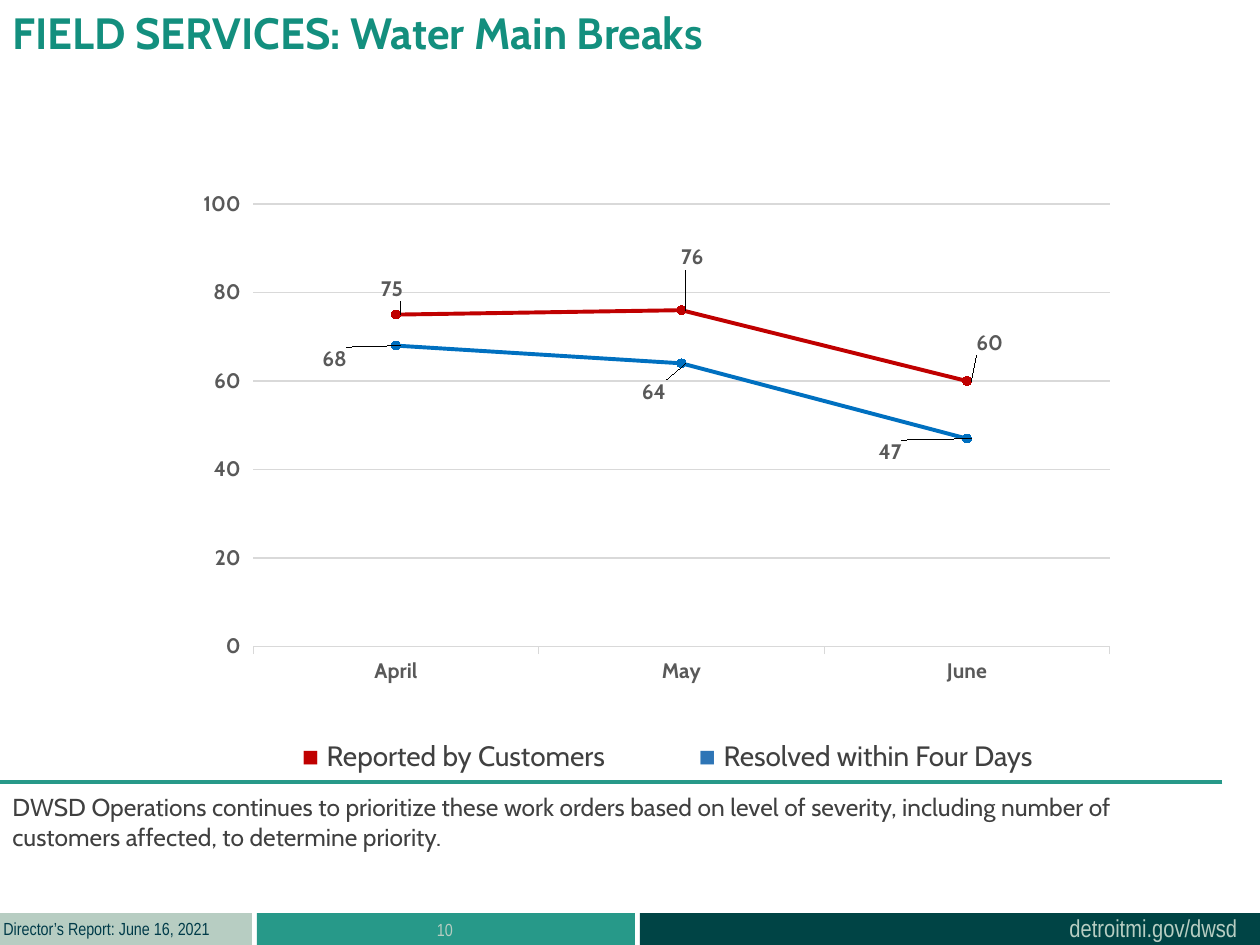
from lxml import etree
from pptx import Presentation
from pptx.chart.data import CategoryChartData
from pptx.dml.color import RGBColor
from pptx.enum.chart import XL_CHART_TYPE, XL_LABEL_POSITION, XL_MARKER_STYLE, XL_TICK_MARK
from pptx.enum.shapes import MSO_CONNECTOR, MSO_SHAPE
from pptx.enum.text import PP_ALIGN
from pptx.oxml.ns import qn
from pptx.util import Cm, Pt

TEAL, DARK, SAGE = "279989", "004445", "B7CDC2"
GREY, GRID, INK = "595959", "D9D9D9", "404040"
HEAD, FOOT = "Cabin", "Arial Narrow"

FOOTER_TOP, FOOTER_HEIGHT = 18.41, 0.64
FOOTER_BARS = [(5.18, 7.62, TEAL), (12.9, 12.5, DARK), (0, 5.08, SAGE)]  # left, width, colour

# place (left, top, width, height), wrap, alignment, runs (text, size, font, colour, bold)
TEXTS = [
    ((21.31, 18.29, 3.94, 0.86), False, PP_ALIGN.LEFT,
     [("detroitmi.gov/dwsd", 14, FOOT, SAGE, False)]),
    ((-0.18, 18.39, 4.67, 0.69), False, PP_ALIGN.LEFT,
     [("Director’s Report: June 16, 2021", 10, FOOT, "003B49", False)]),
    ((5.16, 18.41, 7.62, 1.02), True, PP_ALIGN.CENTER,
     [("10", 10, FOOT, SAGE, False)]),
    ((0, 0, 19.28, 1.96), True, PP_ALIGN.LEFT,
     [("FIELD SERVICES: Water Main Breaks", 25, HEAD, "138F7E", True)]),
    ((0, 15.85, 24.64, 1.45), True, PP_ALIGN.LEFT,
     [("DWSD Operations continues to prioritize these work orders based on level of severity, "
       "including number of customers affected, to determine priority.", 14, HEAD, INK, False)]),
]
LEGEND_PLACE, LEGEND_TAB = (5.84, 14.76, 15.77, 0.94), 8.0
LEGEND = [
    ("■ ", 16, "Arial", "C00000", False),
    ("Reported by Customers\t", 16, HEAD, INK, False),
    ("■ ", 16, "Arial", "2E75B6", False),
    ("Resolved within Four Days", 16, HEAD, INK, False),
]

CHART_PLACE = (2.84, 3.86, 19.69, 11.3)
PLOT = {"x": 0.115, "y": 0.021, "w": 0.877, "h": 0.791}
MONTHS = ["April", "May", "June"]
# name, colour, values, label shifts as shares of the chart size
SERIES = [
    ("Reported by Customers", "C00000", [75, 76, 60],
     [(-0.025, -0.046), (-0.01, -0.094), (0, -0.068)]),
    ("Resolved within Four Days", "0070C0", [68, 64, 47],
     [(-0.085, 0.025), (-0.05, 0.052), (-0.1, 0.025)]),
]


def rgb(value):
    return RGBColor.from_string(value)


def cm(place):
    return [Cm(v) for v in place]


def set_font(font, size, name, color, bold):
    font.size, font.name, font.bold = Pt(size), name, bold
    font.color.rgb = rgb(color)


def set_line(line, color, width):
    line.color.rgb = rgb(color)
    line.width = Pt(width)


def add_text(s, place, wrap, align, runs):
    tf = s.shapes.add_textbox(*cm(place)).text_frame
    tf.word_wrap = wrap
    p = tf.paragraphs[0]
    p.alignment = align
    for text, *style in runs:
        r = p.add_run()
        r.text = text
        set_font(r.font, *style)
    return p


def manual_layout(**values):
    layout = etree.Element(qn("c:layout"))
    manual = etree.SubElement(layout, qn("c:manualLayout"))
    for tag, value in values.items():
        etree.SubElement(manual, qn("c:" + tag)).set("val", str(value))
    return layout


def add_chart(s):
    data = CategoryChartData(number_format="#,##0")
    data.categories = MONTHS
    for name, _, values, _ in SERIES:
        data.add_series(name, values)
    chart = s.shapes.add_chart(XL_CHART_TYPE.LINE_MARKERS, *cm(CHART_PLACE), data).chart
    chart.has_title = chart.has_legend = False
    set_font(chart.font, 12, HEAD, GREY, True)

    area = chart.plots[0]._element.getparent()
    for old in area.findall(qn("c:layout")):
        area.remove(old)
    area.insert(0, manual_layout(layoutTarget="inner", xMode="edge", yMode="edge", **PLOT))

    cat, val = chart.category_axis, chart.value_axis
    for axis in (cat, val):
        axis.major_tick_mark = XL_TICK_MARK.OUTSIDE
        axis.minor_tick_mark = XL_TICK_MARK.NONE
        set_font(axis.tick_labels.font, 12, HEAD, GREY, True)
    set_line(cat.format.line, GRID, 0.75)
    val.format.line.fill.background()
    val.minimum_scale, val.maximum_scale, val.major_unit = 0, 100, 20
    val.has_major_gridlines = True
    set_line(val.major_gridlines.format.line, GRID, 0.75)

    for series, (_, color, _, shifts) in zip(chart.plots[0].series, SERIES):
        series.smooth = False
        set_line(series.format.line, color, 2.25)
        marker = series.marker
        marker.style, marker.size = XL_MARKER_STYLE.CIRCLE, 5
        marker.format.fill.solid()
        marker.format.fill.fore_color.rgb = rgb(color)
        set_line(marker.format.line, color, 0.75)
        labels = series.data_labels
        labels.show_value = True
        set_font(labels.font, 12, HEAD, GREY, True)
        for i, (dx, dy) in enumerate(shifts):
            label = series.points[i].data_label
            set_font(label.font, 12, HEAD, GREY, True)
            label.position = XL_LABEL_POSITION.RIGHT
            idx = labels._element.findall(qn("c:dLbl"))[i].find(qn("c:idx"))
            idx.addnext(manual_layout(x=dx, y=dy))


def main():
    prs = Presentation()
    prs.slide_width, prs.slide_height = Cm(25.4), Cm(19.05)
    s = prs.slides.add_slide(prs.slide_layouts[6])

    for left, width, color in FOOTER_BARS:
        bar = s.shapes.add_shape(MSO_SHAPE.RECTANGLE, *cm((left, FOOTER_TOP, width, FOOTER_HEIGHT)))
        bar.shadow.inherit = False
        bar.fill.solid()
        bar.fill.fore_color.rgb = rgb(color)
        bar.line.fill.background()

    add_chart(s)

    rule = s.shapes.add_connector(MSO_CONNECTOR.STRAIGHT, *cm((24.64, 15.77, 0, 15.77)))
    set_line(rule.line, TEAL, 2.25)
    etree.SubElement(rule._element.spPr, qn("a:effectLst"))

    for text in TEXTS:
        add_text(s, *text)
    p = add_text(s, LEGEND_PLACE, True, PP_ALIGN.LEFT, LEGEND)
    tabs = etree.SubElement(p._p.get_or_add_pPr(), qn("a:tabLst"))
    etree.SubElement(tabs, qn("a:tab"), pos=str(Cm(LEGEND_TAB)), algn="l")

    prs.save("out.pptx")


if __name__ == "__main__":
    main()
